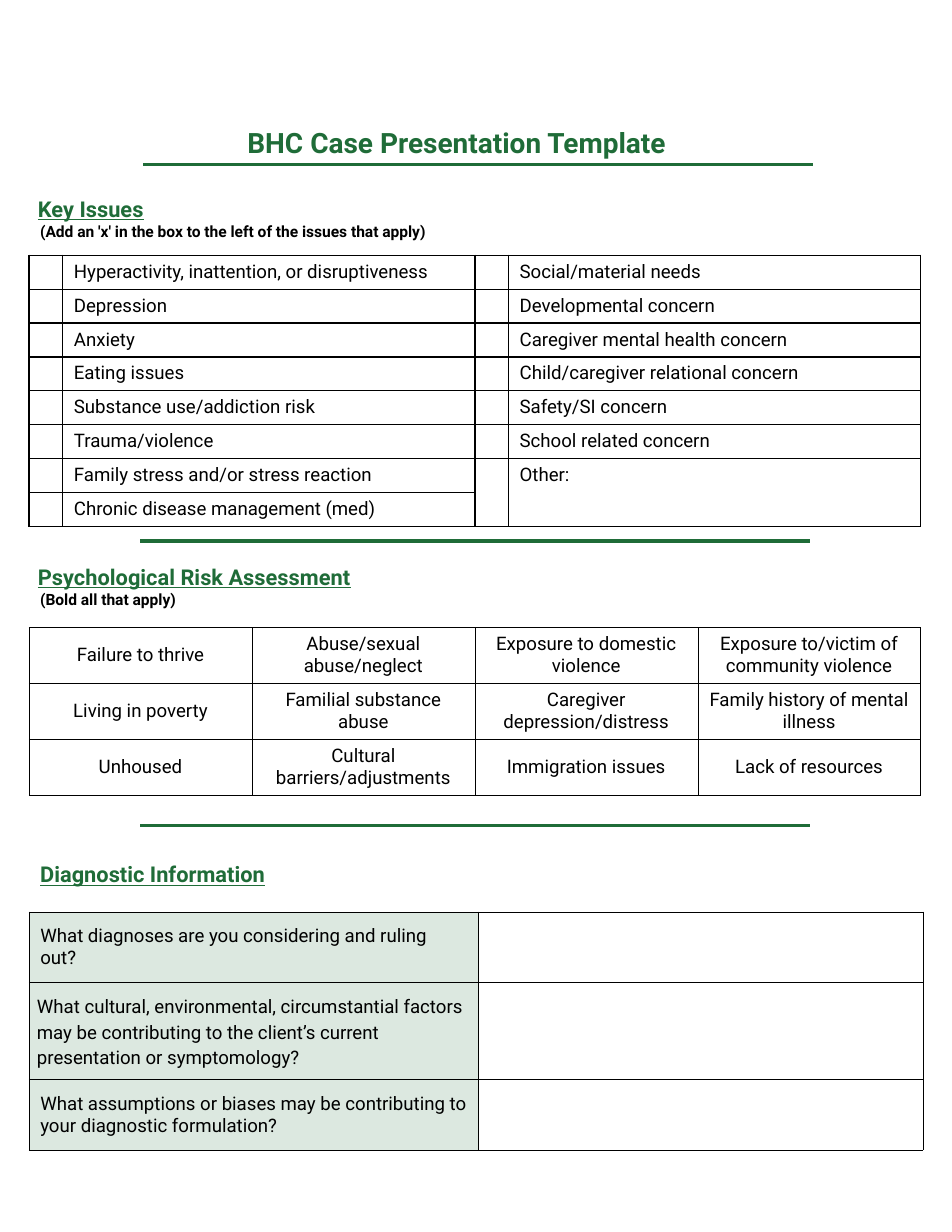
import lxml.etree
import pptx
import pptx.dml.color
import pptx.enum.shapes
import pptx.enum.text
import pptx.oxml.ns
import pptx.util

Inches = pptx.util.Inches
Pt = pptx.util.Pt
color = pptx.dml.color.RGBColor.from_string
qn = pptx.oxml.ns.qn
GREEN, BLACK, WHITE, PALE = "1F6C38", "000000", "FFFFFF", "DCE8E0"
MIDDLE = pptx.enum.text.MSO_ANCHOR.MIDDLE
TOP = pptx.enum.text.MSO_ANCHOR.TOP
CENTER = pptx.enum.text.PP_ALIGN.CENTER

presentation = pptx.Presentation()
presentation.slide_width = Inches(8.5)
presentation.slide_height = Inches(11)
slide = presentation.slides.add_slide(presentation.slide_layouts[6])


def add_run(paragraph, text, size, hex_color, bold=False, underline=False):
    run = paragraph.add_run()
    run.text = text
    run.font.name = "Roboto"
    run.font.size = Pt(size)
    run.font.bold = bold
    run.font.underline = underline
    run.font.color.rgb = color(hex_color)


def add_grid(top, widths, heights, texts, border, anchor):
    table = slide.shapes.add_table(
        len(heights), len(widths), Inches(0.26), Inches(top),
        Inches(sum(widths)), Inches(sum(heights))).table
    table.first_row = False
    table.horz_banding = False
    for column, width in zip(table.columns, widths):
        column.width = Inches(width)
    for row, height, row_texts in zip(table.rows, heights, texts):
        row.height = Inches(height)
        for cell, text in zip(row.cells, row_texts):
            cell.vertical_anchor = anchor
            paragraph = cell.text_frame.paragraphs[0]
            if text:
                add_run(paragraph, text, 12, BLACK)
            else:
                end = lxml.etree.SubElement(paragraph._p, qn("a:endParaRPr"))
                end.set("sz", "1200")
            properties = cell._tc.get_or_add_tcPr()
            for side in ("a:lnL", "a:lnR", "a:lnT", "a:lnB"):
                line = lxml.etree.SubElement(properties, qn(side), w=str(Pt(border)))
                fill = lxml.etree.SubElement(line, qn("a:solidFill"))
                lxml.etree.SubElement(fill, qn("a:srgbClr"), val=BLACK)
            cell.fill.solid()
            cell.fill.fore_color.rgb = color(WHITE)
    return table


title = slide.shapes.add_textbox(Inches(2.11), Inches(1.07), Inches(3.99), Inches(0.4))
title.text_frame.word_wrap = False
add_run(title.text_frame.paragraphs[0], "BHC Case Presentation Template", 18, GREEN, True)

for left, top, text in (
    (0.24, 1.7, "Key Issues"),
    (0.24, 4.98, "Psychological Risk Assessment"),
    (0.26, 7.64, "Diagnostic Information"),
):
    heading = slide.shapes.add_textbox(Inches(left), Inches(top), Inches(7.97), Inches(0.34))
    heading.text_frame.word_wrap = True
    paragraph = heading.text_frame.paragraphs[0]
    paragraph.space_after = Pt(8)
    add_run(paragraph, text, 14, GREEN, True, True)

for top, width, text in (
    (1.91, 4.24, "(Add an 'x' in the box to the left of the issues that apply)"),
    (5.19, 1.48, "(Bold all that apply)"),
):
    hint = slide.shapes.add_textbox(Inches(0.26), Inches(top), Inches(width), Inches(0.3))
    hint.text_frame.word_wrap = True
    paragraph = hint.text_frame.paragraphs[0]
    paragraph.line_spacing = 1.16
    paragraph.space_after = Pt(8)
    add_run(paragraph, text, 10, BLACK, True)

for left, top in ((1.28, 1.47), (1.25, 4.83), (1.25, 7.37)):
    divider = slide.shapes.add_connector(
        pptx.enum.shapes.MSO_CONNECTOR.STRAIGHT,
        Inches(left), Inches(top), Inches(left + 5.98), Inches(top))
    divider.line.color.rgb = color(GREEN)
    divider.line.width = Pt(2.25)
    lxml.etree.SubElement(divider._element.spPr, qn("a:effectLst"))

diagnostic_questions = [
    ("What diagnoses are you considering and ruling out?", ""),
    ("What cultural, environmental, circumstantial factors may be contributing "
     "to the client’s current presentation or symptomology?", ""),
    ("What assumptions or biases may be contributing to your diagnostic formulation?", ""),
]
diagnostic_table = add_grid(
    8.14, [4.01, 3.97], [0.63, 0.87, 0.63], diagnostic_questions, 0.25, MIDDLE)
for row in diagnostic_table.rows:
    row.cells[0].fill.fore_color.rgb = color(PALE)
factors_cell = diagnostic_table.cell(1, 0)
factors_cell.margin_left = factors_cell.margin_right = Inches(0.07)
factors_cell.margin_top = factors_cell.margin_bottom = 0
factors_cell.text_frame.paragraphs[0].line_spacing = 1.16

risks = [
    ("Failure to thrive", "Abuse/sexual abuse/neglect",
     "Exposure to domestic violence", "Exposure to/victim of community violence"),
    ("Living in poverty", "Familial substance abuse",
     "Caregiver depression/distress", "Family history of mental illness"),
    ("Unhoused", "Cultural barriers/adjustments",
     "Immigration issues", "Lack of resources"),
]
risk_table = add_grid(5.6, [1.99] * 4, [0.5] * 3, risks, 0.25, MIDDLE)
for cell in risk_table.iter_cells():
    cell.text_frame.paragraphs[0].alignment = CENTER

issues = [
    ("", "Hyperactivity, inattention, or disruptiveness", "", "Social/material needs"),
    ("", "Depression", "", "Developmental concern"),
    ("", "Anxiety", "", "Caregiver mental health concern"),
    ("", "Eating issues", "", "Child/caregiver relational concern"),
    ("", "Substance use/addiction risk", "", "Safety/SI concern"),
    ("", "Trauma/violence", "", "School related concern"),
    ("", "Family stress and/or stress reaction", "", "Other:"),
    ("", "Chronic disease management (med)", "", ""),
]
issue_table = add_grid(2.28, [0.3, 3.68] * 2, [2.42 / 8] * 8, issues, 1, TOP)
for column in (2, 3):
    issue_table.cell(6, column).merge(issue_table.cell(7, column))

presentation.save("out.pptx")
